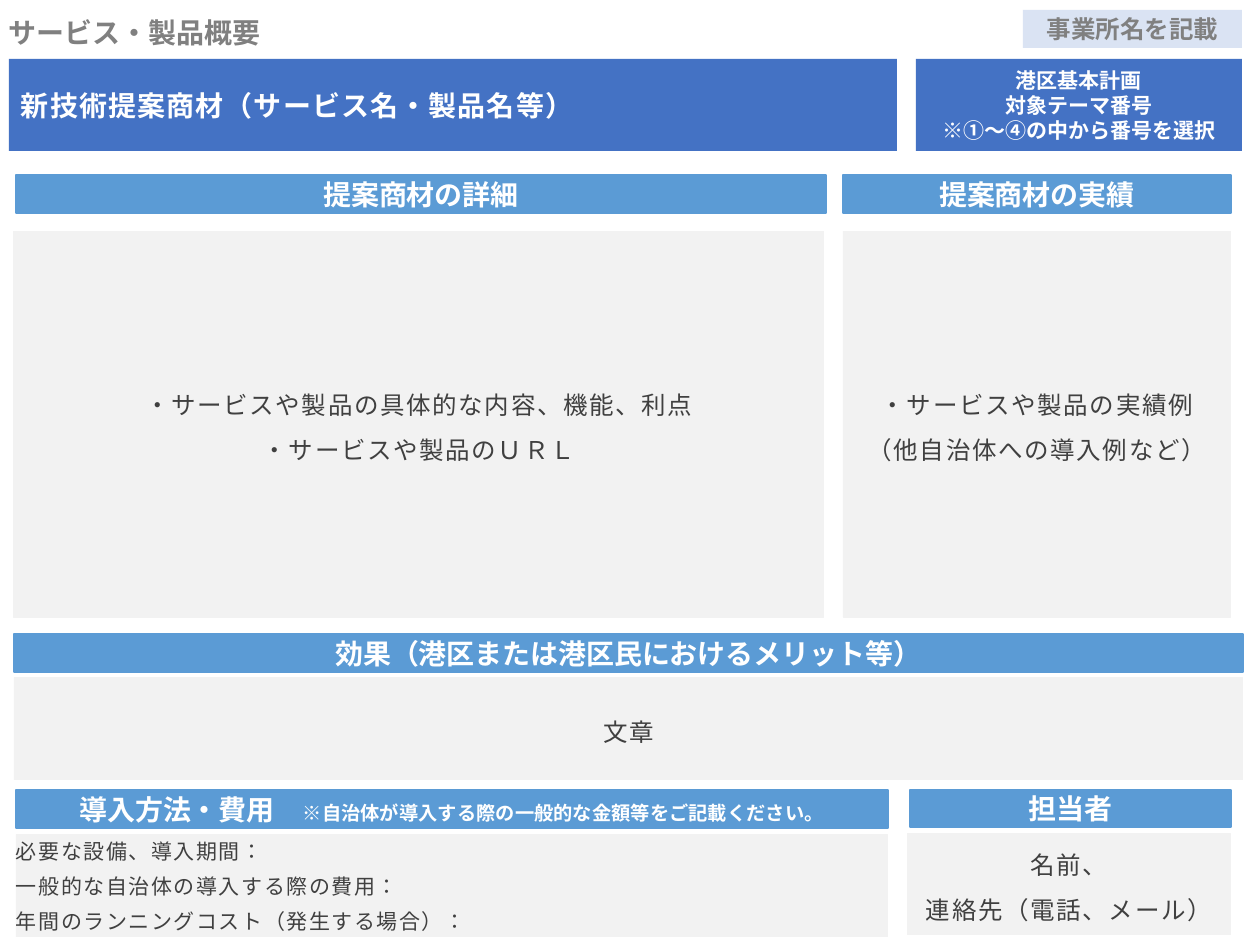
"""Build the one-page service and product proposal form."""
from lxml import etree
from pptx import Presentation
from pptx.dml.color import RGBColor
from pptx.enum import shapes, text
from pptx.oxml.ns import qn
from pptx.util import Pt

PX = 914400 // 126
COLORS = {
    "banner": "4472C4", "heading": "5B9BD5", "panel": "F2F2F2", "tag": "DAE3F3",
    "white": "FFFFFF", "gray": "808080", "body": "404040",
}
CENTER, LEFT = text.PP_ALIGN.CENTER, text.PP_ALIGN.LEFT


def add_box(area, fill, lines, inset=0, border=0):
    box = page.shapes.add_shape(shapes.MSO_SHAPE.RECTANGLE, *[n * PX for n in area])
    box.shadow.inherit = False
    if fill:
        box.fill.solid()
        box.fill.fore_color.rgb = RGBColor.from_string(COLORS[fill])
    else:
        box.fill.background()
    if border:
        box.line.color.rgb = RGBColor.from_string(COLORS[fill])
        box.line.width = Pt(border)
    else:
        box.line.fill.background()
    frame = box.text_frame
    frame.word_wrap = True
    frame.vertical_anchor = text.MSO_ANCHOR.MIDDLE
    frame.margin_left = frame.margin_right = inset * 2 * PX
    frame.margin_top = frame.margin_bottom = inset * PX
    frame.text = "\n".join(lines)
    return frame


def style(frame, size, color, font="Arial", bold=True, align=CENTER, tracking=0):
    for para in frame.paragraphs:
        para.alignment = align
        for span in para.runs:
            span.font.size = Pt(size)
            span.font.bold = bold
            span.font.name = font
            span.font.color.rgb = RGBColor.from_string(COLORS[color])
            props = span.font._element
            props.set("lang", "ja-JP")
            if tracking:
                props.set("spc", str(tracking))
            latin = props.find(qn("a:latin"))
            east = etree.Element(qn("a:ea"), typeface=font)
            latin.addnext(east)


deck = Presentation()
deck.slide_width, deck.slide_height = 1260 * PX, 945 * PX
page = deck.slides.add_slide(deck.slide_layouts[6])

title = page.shapes.add_textbox(9 * PX, 13 * PX, 355 * PX, 38 * PX).text_frame
title.word_wrap = True
title.vertical_anchor = text.MSO_ANCHOR.MIDDLE
title.margin_left = title.margin_right = title.margin_top = title.margin_bottom = 0
title.text = "サービス・製品概要"
style(title, 16, "gray", align=LEFT)

company = add_box((1023, 10, 219, 38), "tag", ["事業所名を記載"])
style(company, 14, "gray")

proposal = add_box((9, 59, 888, 92), "banner", ["新技術提案商材（サービス名・製品名等）"], inset=6)
style(proposal, 16, "white", font="Noto Sans CJK JP", align=LEFT, tracking=70)

theme = add_box((916, 59, 326, 92), "banner",
                ["港区基本計画", "対象テーマ番号", "※①～④の中から番号を選択"], inset=6)
style(theme, 12, "white")

headings = [
    ((16, 175, 810, 38), "提案商材の詳細"),
    ((843, 175, 388, 38), "提案商材の実績"),
    ((14, 634, 1229, 38), "効果（港区または港区民におけるメリット等）"),
    ((16, 790, 872, 38), "導入方法・費用　"),
    ((910, 790, 321, 37), "担当者"),
]
for area, label in headings:
    heading = add_box(area, "heading", [label], border=1.5)
    if label.startswith("導入方法"):
        note = heading.paragraphs[0].add_run()
        note.text = "※自治体が導入する際の一般的な金額等をご記載ください。"
    style(heading, 16, "white")
note.font.size = Pt(11)

panels = [
    ((14, 231, 810, 386), 14, CENTER, 1.2,
     ["・サービスや製品の具体的な内容、機能、利点", "・サービスや製品のＵＲＬ"]),
    ((843, 231, 388, 386), 14, CENTER, 1.2,
     ["・サービスや製品の実績例", "（他自治体への導入例など）"]),
    ((14, 678, 1229, 102), 14, CENTER, 1.2, ["文章"]),
    ((16, 835, 872, 102), 12, LEFT, 1.0,
     ["必要な設備、導入期間：", "一般的な自治体の導入する際の費用：",
      "年間のランニングコスト（発生する場合）："]),
    ((907, 834, 324, 101), 14, CENTER, 1.2, ["名前、", "連絡先（電話、メール）"]),
]
for area, size, align, spacing, lines in panels:
    panel = add_box(area, "panel", lines, border=0.5)
    style(panel, size, "body", font="Calibri", bold=False, align=align, tracking=90)
    for index, para in enumerate(panel.paragraphs):
        para.line_spacing = spacing
        para.space_before = Pt(5.5 if index else 0)

deck.save("out.pptx")
